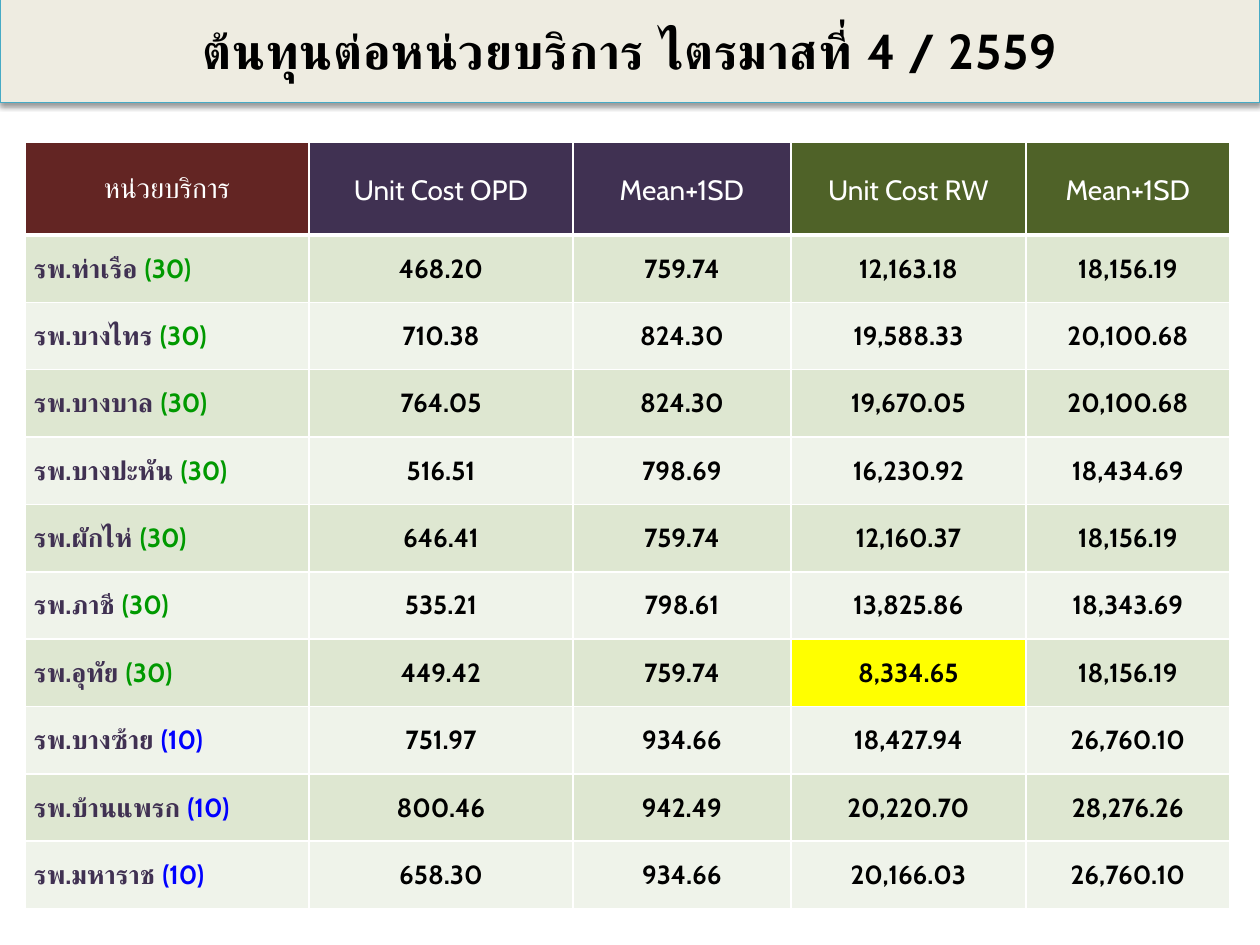
from lxml import etree
from pptx import Presentation
from pptx.dml.color import RGBColor
from pptx.enum.text import MSO_ANCHOR, MSO_AUTO_SIZE, PP_ALIGN
from pptx.oxml import parse_xml
from pptx.oxml.ns import nsdecls, qn
from pptx.util import Pt

PX = 914400 // 126
FONT = "Cabin"
CENTER, LEFT = PP_ALIGN.CENTER, PP_ALIGN.LEFT
MIDDLE = MSO_ANCHOR.MIDDLE

WHITE = RGBColor(0xFF, 0xFF, 0xFF)
BLACK = RGBColor(0x00, 0x00, 0x00)
CREAM = RGBColor(0xEE, 0xEC, 0xE1)
TEAL = RGBColor(0x46, 0xAA, 0xC5)
MAROON = RGBColor(0x63, 0x25, 0x23)
PURPLE = RGBColor(0x40, 0x31, 0x52)
OLIVE = RGBColor(0x4F, 0x62, 0x28)
BAND_DARK = RGBColor(0xDE, 0xE7, 0xD1)
BAND_LIGHT = RGBColor(0xEF, 0xF3, 0xEA)
YELLOW = RGBColor(0xFF, 0xFF, 0x00)
BED_COLORS = {"(30)": RGBColor(0x00, 0x99, 0x00), "(10)": RGBColor(0x00, 0x00, 0xFF)}

COL_WIDTHS = [284, 264, 218, 235, 204]
HEADER_HEIGHT, BODY_HEIGHT = 93, 674
HEADERS = [
    ("หน่วยบริการ", MAROON),
    ("Unit Cost OPD", PURPLE),
    ("Mean+1SD", PURPLE),
    ("Unit Cost RW", OLIVE),
    ("Mean+1SD", OLIVE),
]
HOSPITALS = [
    ("รพ.ท่าเรือ", "(30)", "468.20", "759.74", "12,163.18", "18,156.19"),
    ("รพ.บางไทร", "(30)", "710.38", "824.30", "19,588.33", "20,100.68"),
    ("รพ.บางบาล", "(30)", "764.05", "824.30", "19,670.05", "20,100.68"),
    ("รพ.บางปะหัน", "(30)", "516.51", "798.69", "16,230.92", "18,434.69"),
    ("รพ.ผักไห่", "(30)", "646.41", "759.74", "12,160.37", "18,156.19"),
    ("รพ.ภาชี", "(30)", "535.21", "798.61", "13,825.86", "18,343.69"),
    ("รพ.อุทัย", "(30)", "449.42", "759.74", "8,334.65", "18,156.19"),
    ("รพ.บางซ้าย", "(10)", "751.97", "934.66", "18,427.94", "26,760.10"),
    ("รพ.บ้านแพรก", "(10)", "800.46", "942.49", "20,220.70", "28,276.26"),
    ("รพ.มหาราช", "(10)", "658.30", "934.66", "20,166.03", "26,760.10"),
]
HIGHLIGHT = "8,334.65"


def add_run(p, text, size, color, bold):
    r = p.add_run()
    r.text = text
    r.font.name = FONT
    r.font.size = Pt(size)
    r.font.bold = bold
    r.font.color.rgb = color
    return r


def format_cell(cell, fill, align, bottom=1):
    """Set margins, white borders (widths in points) and fill; return the paragraph."""
    cell.margin_left = cell.margin_right = 9 * PX
    cell.margin_top = cell.margin_bottom = 0
    cell.vertical_anchor = MIDDLE
    tcPr = cell._tc.get_or_add_tcPr()
    for side, width in (("L", 1), ("R", 1), ("T", 1), ("B", bottom)):
        ln = etree.SubElement(tcPr, qn(f"a:ln{side}"), w=str(Pt(width)))
        line_fill = etree.SubElement(ln, qn("a:solidFill"))
        etree.SubElement(line_fill, qn("a:srgbClr"), val=str(WHITE))
    cell.fill.solid()
    cell.fill.fore_color.rgb = fill
    p = cell.text_frame.paragraphs[0]
    p.alignment = align
    return p


prs = Presentation()
prs.slide_width, prs.slide_height = 1260 * PX, 945 * PX
s = prs.slides.add_slide(prs.slide_layouts[5])

# Title band
title = s.shapes.title
title.left, title.top, title.width, title.height = 0, 14 * PX, 1260 * PX, 72 * PX
title.fill.solid()
title.fill.fore_color.rgb = CREAM
title.line.color.rgb = TEAL
title.line.width = Pt(0.75)
title._element.spPr.append(parse_xml(
    f'<a:effectLst {nsdecls("a")}>'
    f'<a:outerShdw blurRad="{Pt(3.1)}" dist="{Pt(1.6)}" dir="5400000" rotWithShape="0">'
    '<a:srgbClr val="000000"><a:alpha val="38000"/></a:srgbClr>'
    '</a:outerShdw></a:effectLst>'))
tf = title.text_frame
tf.word_wrap = True
tf.auto_size = MSO_AUTO_SIZE.SHAPE_TO_FIT_TEXT
tf.vertical_anchor = MIDDLE
p = tf.paragraphs[0]
p.alignment = CENTER
r = add_run(p, "ต้นทุนต่อหน่วยบริการ ไตรมาสที่ 4 / 2559", 28, BLACK, True)
r.font._element.set("spc", "50")

# Unit cost table
table = s.shapes.add_table(
    len(HOSPITALS) + 1, len(HEADERS), 25 * PX, 142 * PX,
    sum(COL_WIDTHS) * PX, (HEADER_HEIGHT + BODY_HEIGHT) * PX).table
for column, width in zip(table.columns, COL_WIDTHS):
    column.width = width * PX
for row in table.rows:
    row.height = BODY_HEIGHT * PX // len(HOSPITALS)
table.rows[0].height = HEADER_HEIGHT * PX

for col, (text, fill) in enumerate(HEADERS):
    p = format_cell(table.cell(0, col), fill, CENTER, bottom=3)
    p.line_spacing = 1.15
    add_run(p, text, 16, WHITE, False)

for row, (name, beds, *values) in enumerate(HOSPITALS, 1):
    band = BAND_DARK if row % 2 else BAND_LIGHT
    p = format_cell(table.cell(row, 0), band, LEFT)
    add_run(p, name + " ", 15, PURPLE, True)
    add_run(p, beds, 15, BED_COLORS[beds], True)
    for col, value in enumerate(values, 1):
        fill = YELLOW if value == HIGHLIGHT else band
        p = format_cell(table.cell(row, col), fill, CENTER)
        add_run(p, value, 15, BLACK, True)

prs.save("out.pptx")
